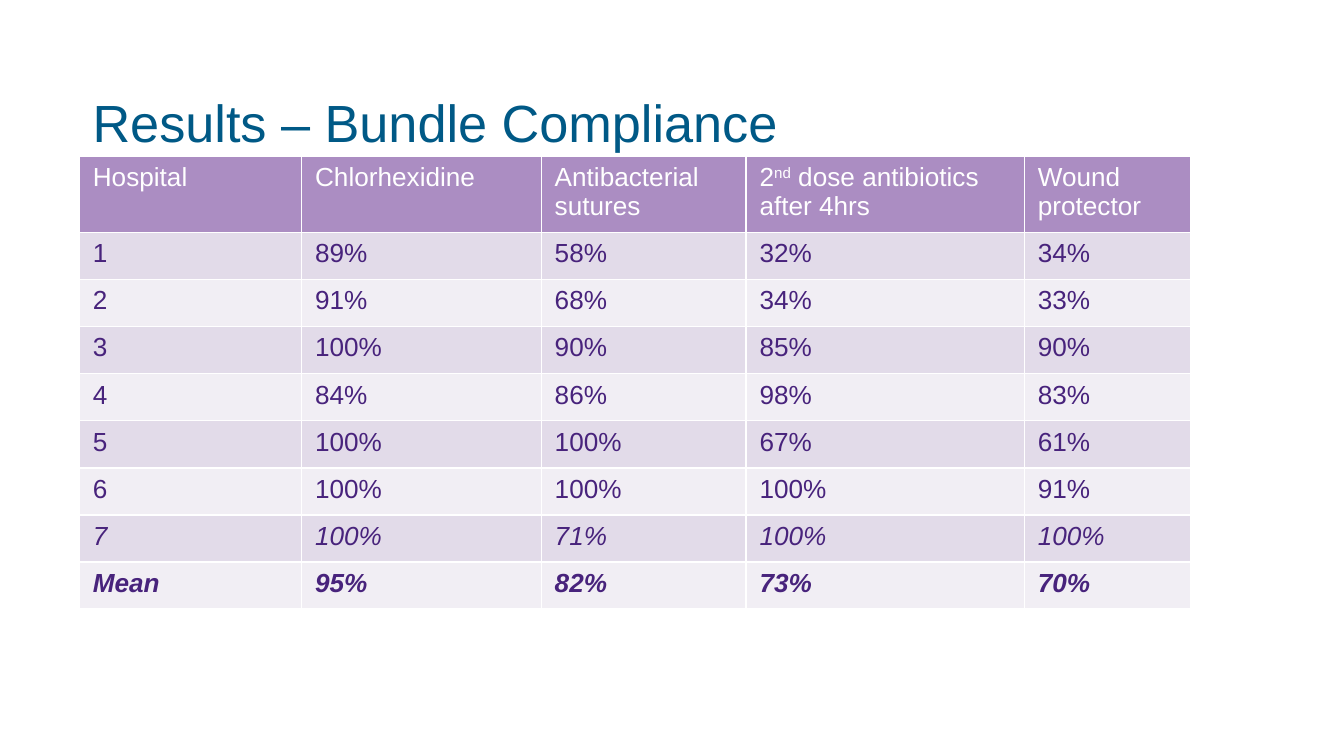
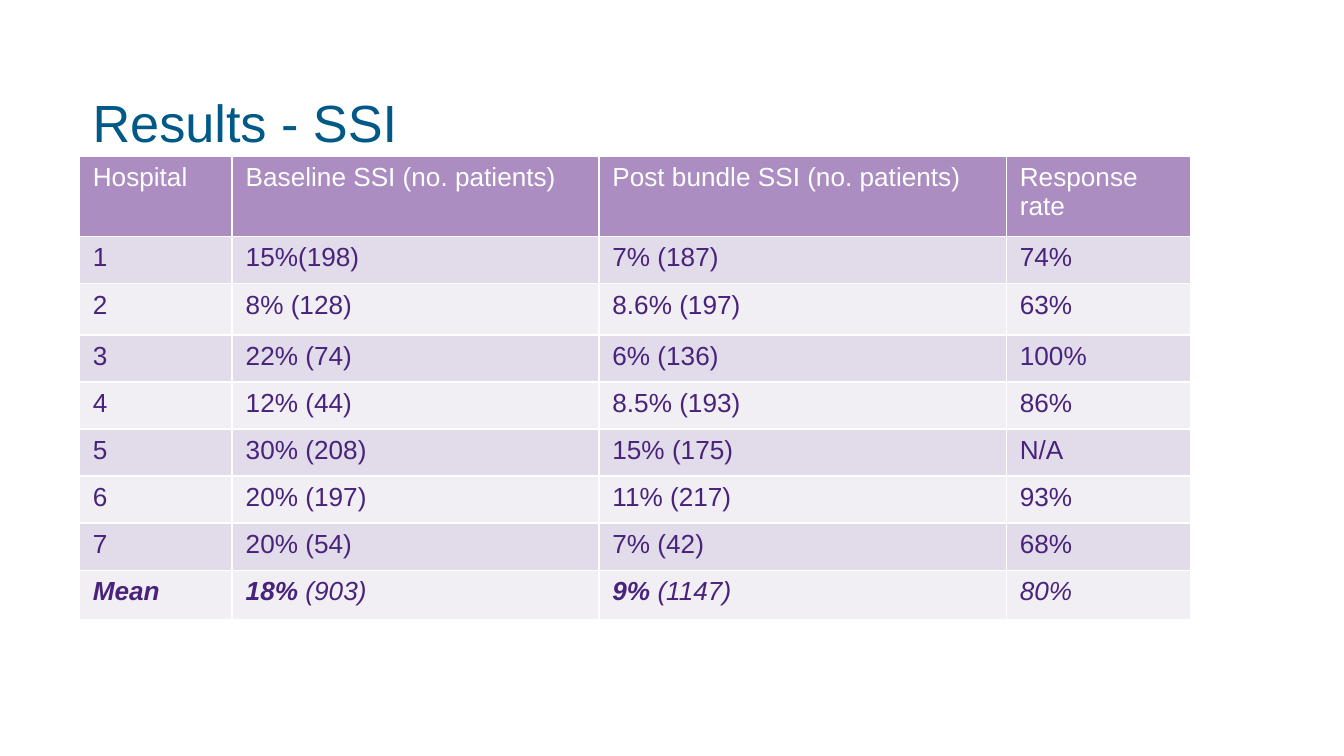
from dataclasses import dataclass, field
from typing import NamedTuple

from lxml import etree
from pptx import Presentation
from pptx import util as u
from pptx.dml.color import RGBColor
from pptx.enum import text
from pptx.oxml import ns

# Shared look
COLOURS = {
    "title": "005986",
    "header": "AB8DC2",
    "band_dark": "E2DBE9",
    "band_light": "F1EEF4",
    "ink": "48237C",
    "white": "FFFFFF",
}
FONT = "Arial"
LEFT, TITLE_TOP, TITLE_HEIGHT, TABLE_TOP = 1.5, 1.75, 1.15, 2.95
ROW_HEIGHT = 0.89


class Piece(NamedTuple):
    """A stretch of cell text that departs from its row's format."""
    text: str
    bold: bool | None = None
    raised: bool = False


Cell = str | list[Piece]


class Row(NamedTuple):
    cells: list[Cell]
    bold: bool = False
    italic: bool = False


@dataclass
class ResultSlide:
    title: str
    title_width: float
    column_widths: list[float]
    header_height: float
    header: list[Cell]
    rows: list[Row]
    tall_rows: dict[int, float] = field(default_factory=dict)


RESULTS = [
    ResultSlide(
        title="Results – Bundle Compliance",
        title_width=16.4,
        column_widths=[4.2, 4.53, 3.87, 5.26, 3.15],
        header_height=1.4,
        header=[
            "Hospital", "Chlorhexidine", "Antibacterial sutures",
            [Piece("2"), Piece("nd", raised=True), Piece(" dose antibiotics after 4hrs")],
            "Wound protector",
        ],
        rows=[
            Row(["1", "89%", "58%", "32%", "34%"]),
            Row(["2", "91%", "68%", "34%", "33%"]),
            Row(["3", "100%", "90%", "85%", "90%"]),
            Row(["4", "84%", "86%", "98%", "83%"]),
            Row(["5", "100%", "100%", "67%", "61%"]),
            Row(["6", "100%", "100%", "100%", "91%"]),
            Row(["7", "100%", "71%", "100%", "100%"], italic=True),
            Row(["Mean", "95%", "82%", "73%", "70%"], bold=True, italic=True),
        ],
    ),
    ResultSlide(
        title="Results - SSI",
        title_width=12,
        column_widths=[2.89, 6.93, 7.7, 3.48],
        header_height=1.52,
        header=["Hospital", "Baseline SSI (no. patients)",
                "Post bundle SSI (no. patients)", "Response rate"],
        rows=[
            Row(["1", "15%(198)", "7% (187)", "74%"]),
            Row(["2", "8% (128)", "8.6% (197)", "63%"]),
            Row(["3", "22% (74)", "6% (136)", "100%"]),
            Row(["4", "12% (44)", "8.5% (193)", "86%"]),
            Row(["5", "30% (208)", "15% (175)", "N/A"]),
            Row(["6", "20% (197)", "11% (217)", "93%"]),
            Row(["7", "20% (54)", "7% (42)", "68%"]),
            Row([
                [Piece("Mean", bold=True)],
                [Piece("18% ", bold=True), Piece("(903)")],
                [Piece("9% ", bold=True), Piece("(1147)")],
                "80%",
            ], italic=True),
        ],
        tall_rows={2: 0.97, 8: 0.94},
    ),
]


def add_text(paragraph, words: str, *, size: float, colour: str, bold: bool = False,
             italic: bool = False, raised: bool = False) -> None:
    run = paragraph.add_run()
    run.text = words
    font = run.font
    font.name, font.size = FONT, u.Pt(size)
    font.bold, font.italic = bold, italic
    font.color.rgb = RGBColor.from_string(COLOURS[colour])
    if raised:
        run._r.get_or_add_rPr().set("baseline", "30000")


def add_title(slide, title: str, width: float) -> None:
    """Stand the title just above the table, clear of its top edge."""
    box = slide.shapes.add_textbox(u.Cm(LEFT), u.Cm(TITLE_TOP), u.Cm(width), u.Cm(TITLE_HEIGHT))
    frame = box.text_frame
    frame.word_wrap = True
    frame.margin_top = frame.margin_bottom = 0
    frame.vertical_anchor = text.MSO_ANCHOR.BOTTOM
    add_text(frame.paragraphs[0], title, size=28, colour="title")


def set_borders(cell) -> None:
    properties = cell._tc.get_or_add_tcPr()
    for side in "LRTB":
        line = etree.SubElement(properties, ns.qn(f"a:ln{side}"), w=str(u.Pt(1)))
        fill = etree.SubElement(line, ns.qn("a:solidFill"))
        etree.SubElement(fill, ns.qn("a:srgbClr"), val=COLOURS["white"])


def fill_row(table, index: int, row: Row) -> None:
    is_header = index == 0
    band = "header" if is_header else ("band_dark" if index % 2 else "band_light")
    for column, content in enumerate(row.cells):
        cell = table.cell(index, column)
        set_borders(cell)
        cell.fill.solid()
        cell.fill.fore_color.rgb = RGBColor.from_string(COLOURS[band])
        pieces = [Piece(content)] if isinstance(content, str) else content
        for piece in pieces:
            add_text(cell.text_frame.paragraphs[0], piece.text, size=14,
                     colour="white" if is_header else "ink",
                     bold=row.bold if piece.bold is None else piece.bold,
                     italic=row.italic, raised=piece.raised)


def add_results_table(slide, result: ResultSlide) -> None:
    rows = [Row(result.header), *result.rows]
    heights = [result.header_height] + [
        result.tall_rows.get(index, ROW_HEIGHT) for index in range(1, len(rows))]
    widths = result.column_widths
    table = slide.shapes.add_table(
        len(rows), len(widths), u.Cm(LEFT), u.Cm(TABLE_TOP),
        u.Cm(sum(widths)), u.Cm(sum(heights))).table
    for column, width in zip(table.columns, widths):
        column.width = u.Cm(width)
    for index, (row, height) in enumerate(zip(rows, heights)):
        table.rows[index].height = u.Cm(height)
        fill_row(table, index, row)


def main() -> None:
    deck = Presentation()
    deck.slide_width, deck.slide_height = u.Cm(25.4), u.Cm(14.29)
    for result in RESULTS:
        slide = deck.slides.add_slide(deck.slide_layouts[6])
        add_title(slide, result.title, result.title_width)
        add_results_table(slide, result)
    deck.save("out.pptx")


if __name__ == "__main__":
    main()
